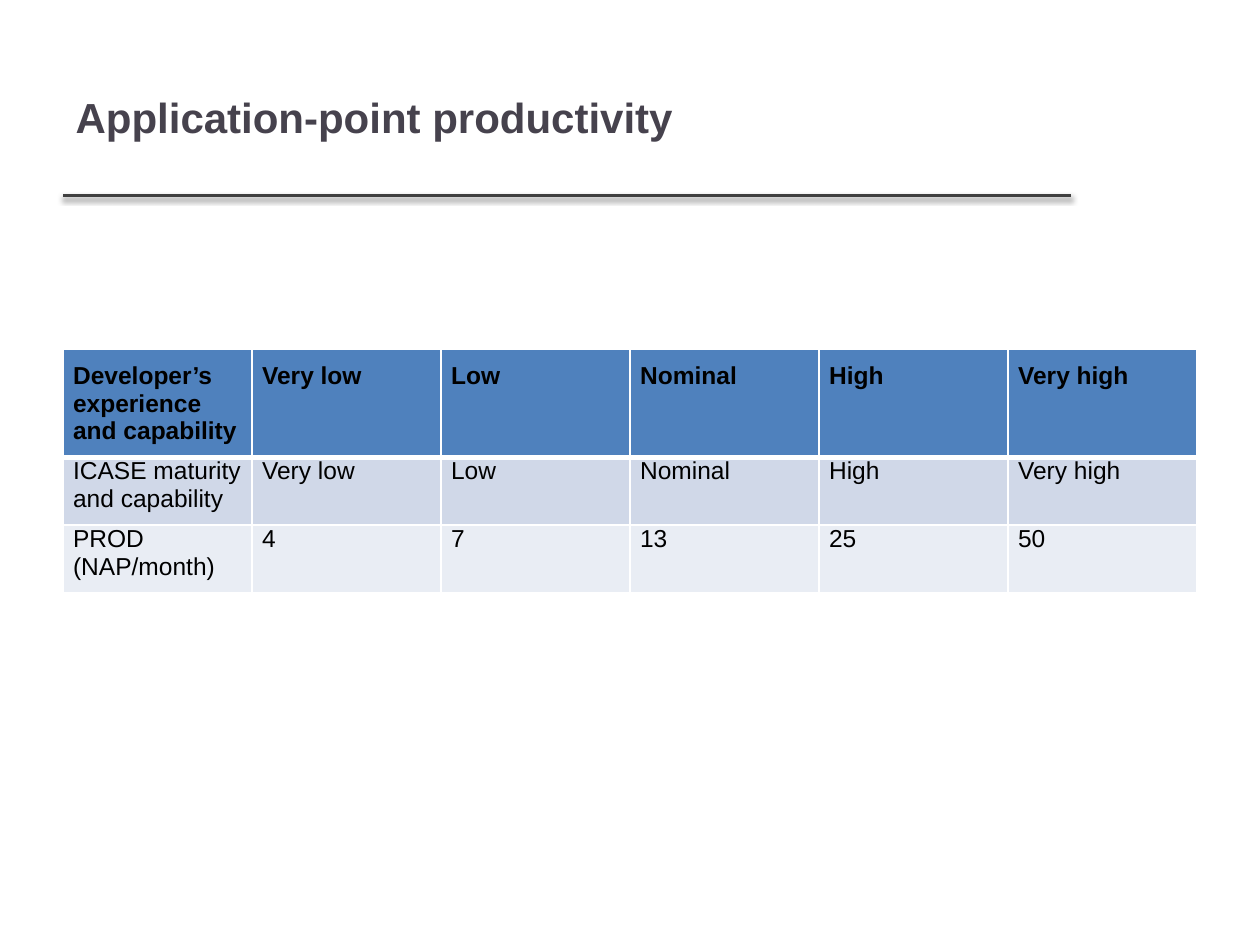
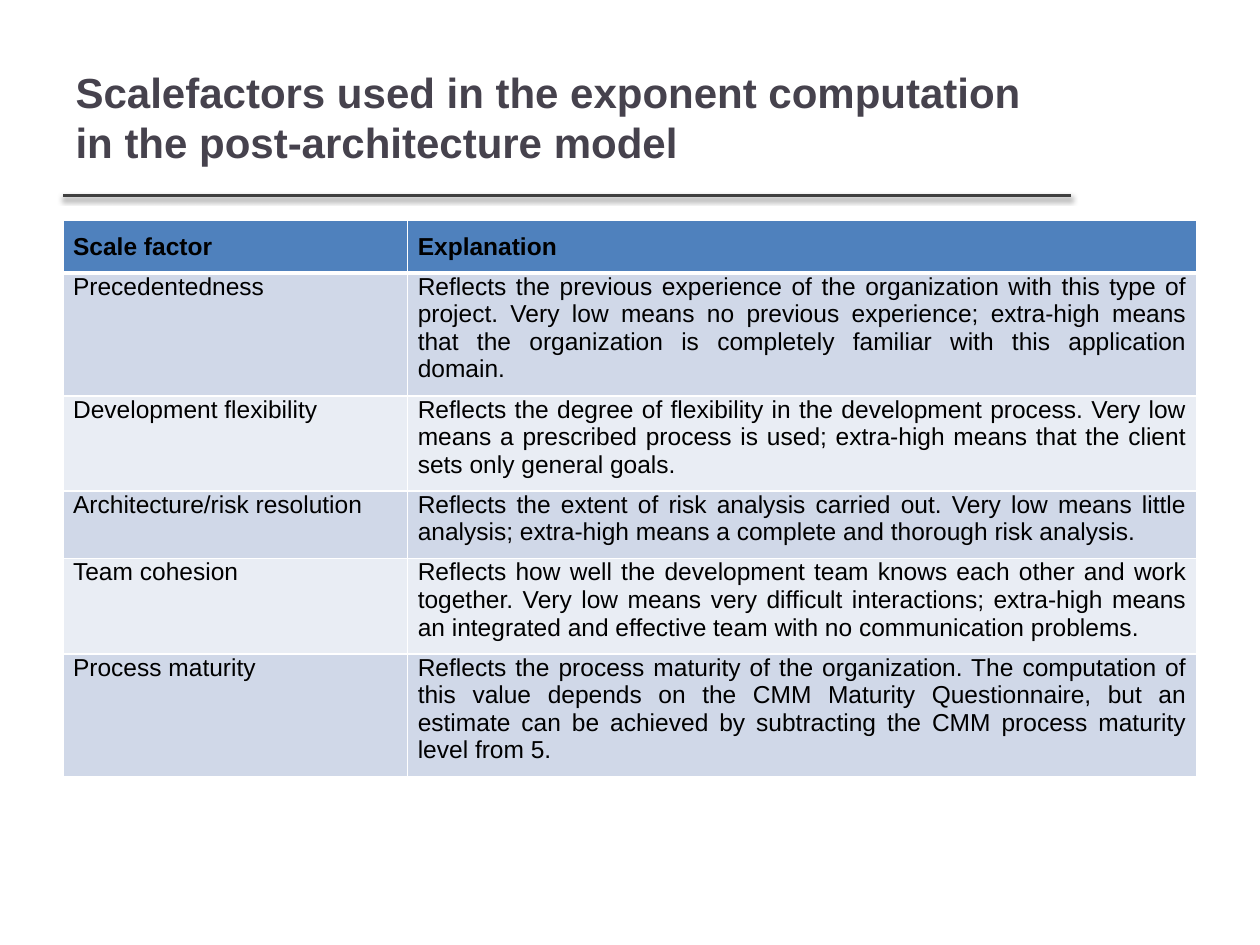
from lxml import etree
from pptx import Presentation, util as u
from pptx.dml.color import RGBColor
from pptx.enum import shapes, text
from pptx.oxml.ns import qn

WIDTH, HEIGHT = u.Inches(10), u.Inches(7.5)
MARGIN = 0.05  # share of the slide width
TITLE_BOX = (MARGIN, 0.04, 0.8, 0.167)  # left, top, width, height as shares
FONT = "Arial"
ROW_HEIGHT = u.Inches(0.41)  # rows grow to fit their text
COLOURS = {
    "title": "46424D",
    "rule": "404040",
    "text": "000000",
    "border": "FFFFFF",
    "header": "4F81BD",
    "bands": ("D0D8E8", "E9EDF4"),
}

PRODUCTIVITY = [
    ["Developer’s experience and capability", "Very low", "Low", "Nominal", "High", "Very high"],
    ["ICASE maturity and capability", "Very low", "Low", "Nominal", "High", "Very high"],
    ["PROD (NAP/month)", "4", "7", "13", "25", "50"],
]
SCALE_FACTORS = [
    ["Scale factor", "Explanation"],
    ["Precedentedness",
     "Reflects the previous experience of the organization with this type of project. "
     "Very low means no previous experience; extra-high means that the organization is "
     "completely familiar with this application domain."],
    ["Development flexibility",
     "Reflects the degree of flexibility in the development process. Very low means a "
     "prescribed process is used; extra-high means that the client sets only general goals."],
    ["Architecture/risk resolution",
     "Reflects the extent of risk analysis carried out. Very low means little analysis; "
     "extra-high means a complete and thorough risk analysis."],
    ["Team cohesion",
     "Reflects how well the development team knows each other and work together. Very low "
     "means very difficult interactions; extra-high means an integrated and effective team "
     "with no communication problems."],
    ["Process maturity",
     "Reflects the process maturity of the organization. The computation of this value "
     "depends on the CMM Maturity Questionnaire, but an estimate can be achieved by "
     "subtracting the CMM process maturity level from 5."],
]


def scale_box(box):
    """Turn shares of the slide into lengths."""
    return [int(share * side) for share, side in zip(box, (WIDTH, HEIGHT) * 2)]


def write(paragraph, words, size, colour, bold, alignment):
    paragraph.alignment = alignment
    run = paragraph.add_run()
    run.text = words
    run.font.name, run.font.size, run.font.bold = FONT, u.Pt(size), bold
    run.font.color.rgb = RGBColor.from_string(colour)


def add_soft_shadow(connector):
    effects = etree.SubElement(connector._element.spPr, qn("a:effectLst"))
    shadow = etree.SubElement(effects, qn("a:outerShdw"), blurRad=str(u.Pt(3.1)),
                              dist=str(u.Pt(1.6)), dir="5400000", rotWithShape="0")
    colour = etree.SubElement(shadow, qn("a:srgbClr"), val="000000")
    etree.SubElement(colour, qn("a:alpha"), val="38000")


def add_title(slide, words, box):
    """Fill the title placeholder and rule it off along its lower edge."""
    left, top, width, height = scale_box(box)
    title = slide.shapes.title
    title.left, title.top, title.width, title.height = left, top, width, height
    title.text_frame.vertical_anchor = text.MSO_ANCHOR.MIDDLE
    write(title.text_frame.paragraphs[0], words, 24, COLOURS["title"], True, text.PP_ALIGN.LEFT)

    bottom = top + height
    rule = slide.shapes.add_connector(shapes.MSO_CONNECTOR.STRAIGHT,
                                      left, bottom, left + width, bottom)
    rule.line.color.rgb = RGBColor.from_string(COLOURS["rule"])
    rule.line.width = u.Pt(2)
    add_soft_shadow(rule)


def add_borders(cell, is_header):
    widths = {"lnL": 1, "lnR": 1, "lnT": 1, "lnB": 3 if is_header else 1}
    if not is_header:
        del widths["lnT"]  # drawn by the row above
    properties = cell._tc.get_or_add_tcPr()
    for side, width in widths.items():
        line = etree.SubElement(properties, qn("a:" + side), w=str(u.Pt(width)))
        fill = etree.SubElement(line, qn("a:solidFill"))
        etree.SubElement(fill, qn("a:srgbClr"), val=COLOURS["border"])


def format_cell(cell, words, row, alignment):
    is_header = row == 0
    add_borders(cell, is_header)
    cell.fill.solid()
    fill = COLOURS["header"] if is_header else COLOURS["bands"][(row - 1) % 2]
    cell.fill.fore_color.rgb = RGBColor.from_string(fill)
    cell.margin_left = cell.margin_right = u.Inches(0.08)
    cell.margin_top = u.Inches(0.1 if is_header else 0)
    cell.margin_bottom = u.Inches(0.1)
    write(cell.text_frame.paragraphs[0], words, 14, COLOURS["text"], is_header, alignment)


def add_banded_table(slide, rows, top, column_shares, first_alignment):
    left, top, width, _ = scale_box((MARGIN, top, 1 - 2 * MARGIN, 0))
    table = slide.shapes.add_table(len(rows), len(column_shares), left, top,
                                   width, ROW_HEIGHT * len(rows)).table
    table.horz_banding = False
    for column, share in zip(table.columns, column_shares):
        column.width = int(width * share)
    for r, row in enumerate(rows):
        table.rows[r].height = ROW_HEIGHT
        for c, words in enumerate(row):
            alignment = text.PP_ALIGN.JUSTIFY if c else first_alignment
            format_cell(table.cell(r, c), words, r, alignment)


def add_table_slide(presentation, title, *table_options):
    slide = presentation.slides.add_slide(presentation.slide_layouts.get_by_name("Title Only"))
    add_title(slide, title, TITLE_BOX)
    add_banded_table(slide, *table_options)


def main():
    presentation = Presentation()
    presentation.slide_width, presentation.slide_height = WIDTH, HEIGHT
    add_table_slide(presentation, "Application-point productivity",
                    PRODUCTIVITY, 0.37, [1 / 6] * 6, text.PP_ALIGN.LEFT)
    add_table_slide(presentation,
                    "Scalefactors used in the exponent computation in the post-architecture model",
                    SCALE_FACTORS, 0.233, [0.304, 0.696], text.PP_ALIGN.JUSTIFY)
    presentation.save("out.pptx")


if __name__ == "__main__":
    main()
